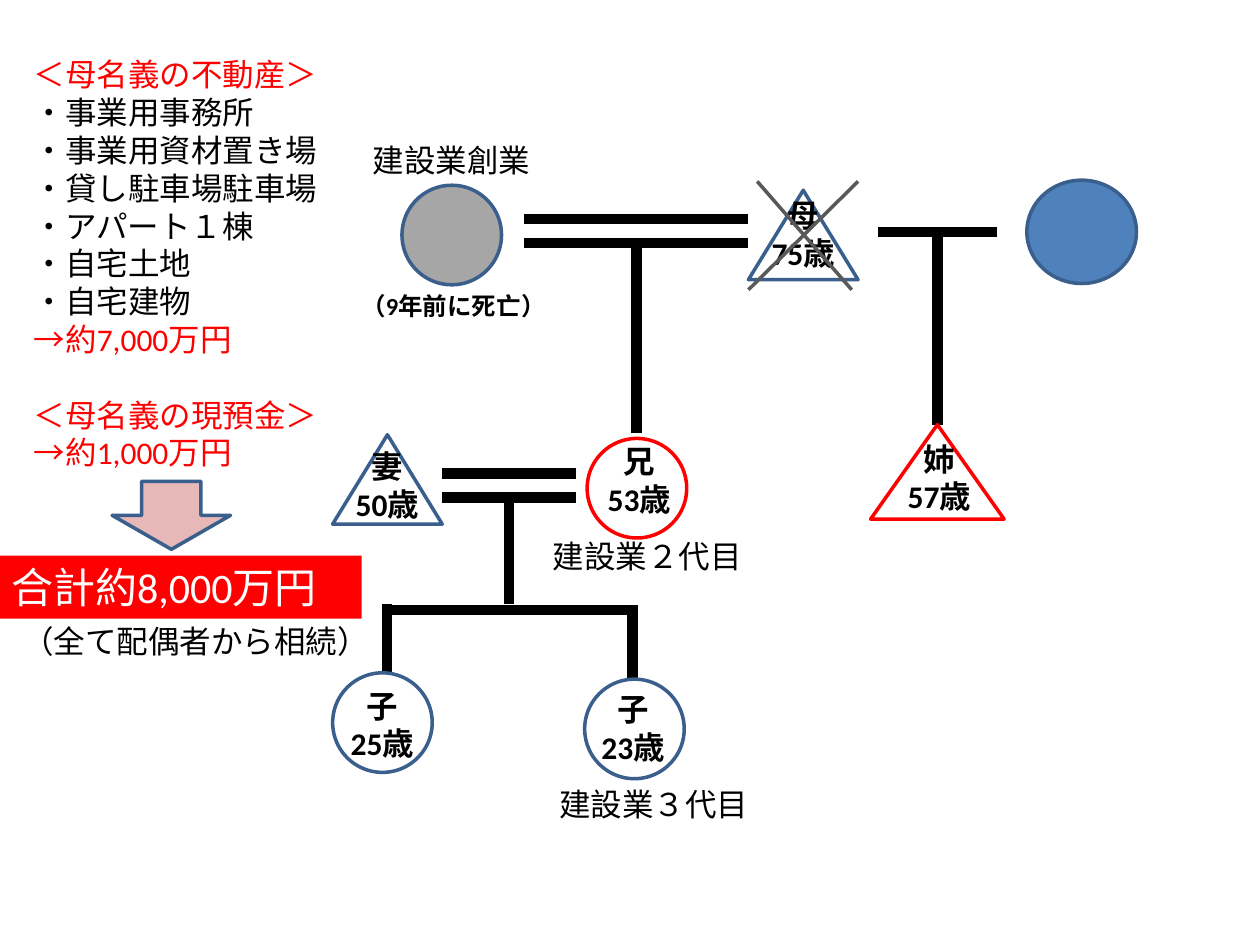
from pptx import Presentation
from pptx.dml.color import RGBColor
from pptx.enum.shapes import MSO_CONNECTOR, MSO_SHAPE
from pptx.enum.text import MSO_ANCHOR, PP_ALIGN
from pptx.oxml.ns import qn
from pptx.util import Inches, Pt

FONT = "Calibri"
COLORS = {
    "black": "000000",
    "white": "FFFFFF",
    "red": "FF0000",
    "outline": "3A5F8C",
    "gray": "A6A6A6",
    "cross": "595959",
    "blue": "4F81BD",
    "pink": "E6B9B8",
}


def rgb(name):
    return RGBColor.from_string(COLORS[name])


def add_figure(slide, kind, box, line="outline", fill=None):
    sp = slide.shapes.add_shape(kind, *map(Inches, box))
    sp.shadow.inherit = False
    if fill:
        sp.fill.solid()
        sp.fill.fore_color.rgb = rgb(fill)
    else:
        sp.fill.background()
    sp.line.color.rgb = rgb(line)
    sp.line.width = Pt(2)
    return sp


def add_line(slide, x1, y1, x2, y2, color="black", width=6):
    cxn = slide.shapes.add_connector(
        MSO_CONNECTOR.STRAIGHT, *map(Inches, (x1, y1, x2, y2)))
    cxn.line.color.rgb = rgb(color)
    cxn.line.width = Pt(width)
    sp_pr = cxn._element.spPr
    sp_pr.append(sp_pr.makeelement(qn("a:effectLst"), {}))


def add_text(slide, box, paragraphs, size=18, bold=False,
             align=PP_ALIGN.LEFT, wrap=False, fill=None):
    """Each paragraph is (text, color) or (text, color, space before)."""
    sp = slide.shapes.add_textbox(*map(Inches, box))
    if fill:
        sp.fill.solid()
        sp.fill.fore_color.rgb = rgb(fill)
    tf = sp.text_frame
    tf.word_wrap = wrap
    tf.vertical_anchor = MSO_ANCHOR.TOP
    for i, (text, color, *space) in enumerate(paragraphs):
        p = tf.paragraphs[0] if i == 0 else tf.add_paragraph()
        p.alignment = align
        if space:
            p.space_before = Pt(space[0])
        r = p.add_run()
        r.text = text
        r.font.name = FONT
        r.font.size = Pt(size)
        r.font.bold = bold
        r.font.color.rgb = rgb(color)


def add_person(slide, kind, box, name, age, label_at, line="outline"):
    add_figure(slide, kind, box, line)
    add_text(slide, (*label_at, 0.79, 0.71),
             [(name, "black"), (f"{age}歳", "black")],
             bold=True, align=PP_ALIGN.CENTER, wrap=True)


def add_marriage(slide, x1, x2, y):
    for offset in (0, 0.19):
        add_line(slide, x1, y + offset, x2, y + offset)


def add_assets(slide):
    property_items = ["事業用事務所", "事業用資材置き場", "貸し駐車場駐車場",
                      "アパート１棟", "自宅土地", "自宅建物"]
    add_text(slide, (0.17, 0.39, 2.47, 3.74), [
        ("＜母名義の不動産＞", "red"),
        *((f"・{item}", "black") for item in property_items),
        ("→約7,000万円", "red"),
        ("＜母名義の現預金＞", "red", 21.6),
        ("→約1,000万円", "red"),
    ])
    add_figure(slide, MSO_SHAPE.DOWN_ARROW, (0.89, 3.82, 0.94, 0.54),
               fill="pink")
    add_text(slide, (-0.01, 4.41, 2.88, 0.5), [("合計約8,000万円", "white")],
             size=24, wrap=True, fill="red")
    add_text(slide, (0.08, 4.89, 2.98, 0.4),
             [("（全て配偶者から相続）", "black")])


def add_family(slide):
    circle, triangle = MSO_SHAPE.OVAL, MSO_SHAPE.ISOSCELES_TRIANGLE

    # Lines of marriage and descent
    add_marriage(slide, 4.16, 5.94, 1.74)
    add_line(slide, 5.05, 1.93, 5.05, 3.44)
    add_marriage(slide, 3.51, 4.57, 3.76)
    add_line(slide, 4.04, 3.92, 4.04, 4.79)
    add_line(slide, 3.07, 4.84, 5.06, 4.84)
    add_line(slide, 3.07, 4.79, 3.07, 5.34)
    add_line(slide, 5.02, 4.84, 5.02, 5.39)
    add_line(slide, 6.97, 1.84, 7.91, 1.84)
    add_line(slide, 7.44, 1.86, 7.44, 3.37)

    # Parents
    add_figure(slide, circle, (3.19, 1.47, 0.79, 0.79), fill="gray")
    add_figure(slide, circle, (8.15, 1.43, 0.87, 0.82), fill="blue")
    add_person(slide, triangle, (5.94, 1.51, 0.87, 0.71), "母", 75,
               (5.98, 1.51))
    add_line(slide, 6.81, 1.44, 5.94, 2.3, "cross", 2)
    add_line(slide, 6.01, 1.44, 6.76, 2.3, "cross", 2)

    # Children and grandchildren
    add_person(slide, triangle, (2.64, 3.45, 0.87, 0.71), "妻", 50,
               (2.68, 3.5))
    add_person(slide, circle, (4.66, 3.48, 0.79, 0.79), "兄", 53,
               (4.68, 3.46), "red")
    add_person(slide, triangle, (6.91, 3.37, 1.06, 0.75), "姉", 57,
               (7.06, 3.44), "red")
    add_person(slide, circle, (2.64, 5.34, 0.79, 0.79), "子", 25,
               (2.64, 5.4))
    add_person(slide, circle, (4.64, 5.39, 0.79, 0.79), "子", 23,
               (4.63, 5.43))

    # Captions
    add_text(slide, (2.65, 2.26, 1.9, 0.64), [("（9年前に死亡）", "black")],
             size=14, bold=True, align=PP_ALIGN.CENTER, wrap=True)
    for x, y, width, caption in ((2.86, 1.07, 1.46, "建設業創業"),
                                 (4.29, 4.21, 1.72, "建設業２代目"),
                                 (4.34, 6.18, 1.72, "建設業３代目")):
        add_text(slide, (x, y, width, 0.4), [(caption, "black")])


def main():
    prs = Presentation()
    prs.slide_width, prs.slide_height = Inches(10), Inches(7.5)
    slide = prs.slides.add_slide(prs.slide_layouts[6])
    add_assets(slide)
    add_family(slide)
    prs.save("out.pptx")


if __name__ == "__main__":
    main()
